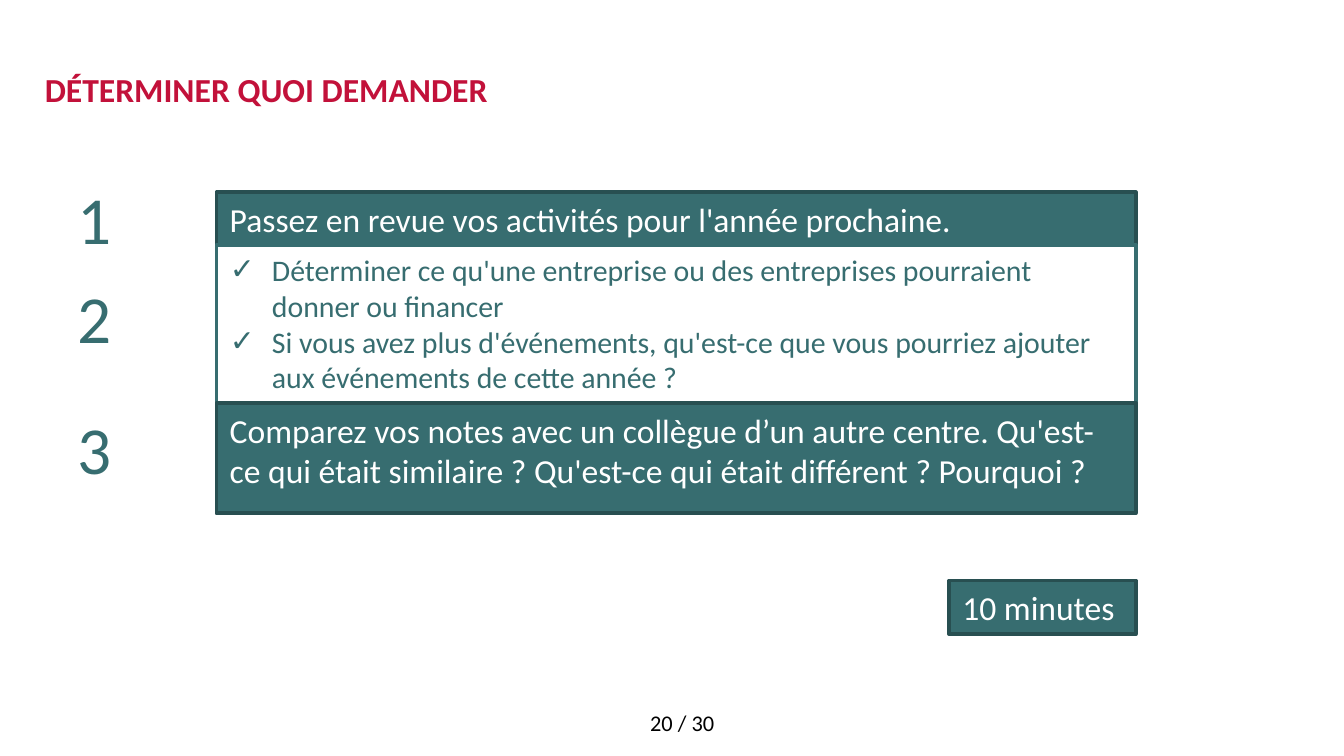
import pptx
import pptx.util
import pptx.oxml
from pptx.dml.color import RGBColor
from pptx.enum.shapes import MSO_SHAPE
from pptx.enum.text import MSO_ANCHOR, MSO_AUTO_SIZE, PP_ALIGN
from pptx.oxml.ns import nsdecls

Pt = pptx.util.Pt

RED = RGBColor(0xC2, 0x11, 0x3A)
TEAL = RGBColor(0x37, 0x6D, 0x70)
DARK_TEAL = RGBColor(0x28, 0x4F, 0x51)
WHITE = RGBColor(0xFF, 0xFF, 0xFF)
BLACK = RGBColor(0, 0, 0)

TITLE = "DÉTERMINER QUOI DEMANDER"
REVIEW = "Passez en revue vos activités pour l'année prochaine."
CHECKS = [
    "Déterminer ce qu'une entreprise ou des entreprises pourraient donner ou financer",
    "Si vous avez plus d'événements, qu'est-ce que vous pourriez ajouter aux événements de cette année ?",
]
COMPARE = ("Comparez vos notes avec un collègue d’un autre centre. Qu'est-ce qui était similaire ? "
           "Qu'est-ce qui était différent ? Pourquoi ?")
DURATION = "10 minutes"
PAGE = "20 / 30"
NUMBERS = [("1", 91.5), ("2", 144.7), ("3", 214.6)]  # text, top

LEFT, WIDTH = 116, 492.5
RIGHT = LEFT + WIDTH
REVIEW_TOP, CHECKS_TOP, COMPARE_TOP, COMPARE_BOTTOM = 103, 131.2, 216, 275
BAND_HEIGHT = 28.8
DURATION_WIDTH = 100
INDENT = 22.5


def place(sp, left, top, width, height):
    sp.left, sp.top, sp.width, sp.height = Pt(left), Pt(top), Pt(width), Pt(height)


def write(sp, text, size, color, bold=False, align=PP_ALIGN.LEFT, anchor=MSO_ANCHOR.TOP):
    tf = sp.text_frame
    tf.word_wrap = True
    tf.auto_size = MSO_AUTO_SIZE.NONE
    tf.vertical_anchor = anchor
    tf.text = text
    for p in tf.paragraphs:
        p.alignment = align
        p.space_before = Pt(0)
        for r in p.runs:
            r.font.name = "Calibri"
            r.font.size = Pt(size)
            r.font.bold = bold
            r.font.color.rgb = color


def paint(sp, fill, line):
    sp.fill.solid()
    sp.fill.fore_color.rgb = fill
    sp.line.color.rgb = line
    sp.line.width = Pt(2)


def add_band(s, text, left, top, width, height):
    sp = s.shapes.add_shape(MSO_SHAPE.RECTANGLE, Pt(left), Pt(top), Pt(width), Pt(height))
    sp.shadow.inherit = False
    paint(sp, TEAL, DARK_TEAL)
    write(sp, text, 18, WHITE)
    return sp


def add_label(s, text, left, top, width, height, size, color, align=PP_ALIGN.LEFT):
    sp = s.shapes.add_textbox(Pt(left), Pt(top), Pt(width), Pt(height))
    write(sp, text, size, color, align=align)


def add_check_mark(p):
    pPr = p._p.get_or_add_pPr()
    pPr.set("marL", str(Pt(INDENT)))
    pPr.set("indent", str(-Pt(INDENT)))
    for xml in (f'<a:buClr {nsdecls("a")}><a:srgbClr val="{TEAL}"/></a:buClr>',
                f'<a:buChar {nsdecls("a")} char="✓"/>'):
        pPr.append(pptx.oxml.parse_xml(xml))


prs = pptx.Presentation()
prs.slide_width, prs.slide_height = Pt(720), Pt(405)
s = prs.slides.add_slide(prs.slide_layouts[1])

title, checklist = s.placeholders[0], s.placeholders[1]
place(title, 24, 21, 672, 54.5)
write(title, TITLE, 18, RED, bold=True, align=PP_ALIGN.JUSTIFY, anchor=MSO_ANCHOR.MIDDLE)
tf = title.text_frame
tf.margin_left = tf.margin_right = tf.margin_top = tf.margin_bottom = 0
tf.paragraphs[0].line_spacing = Pt(20)

place(checklist, LEFT, CHECKS_TOP, WIDTH, COMPARE_TOP - CHECKS_TOP)
paint(checklist, WHITE, TEAL)
write(checklist, "\n".join(CHECKS), 16, TEAL)
for p in checklist.text_frame.paragraphs:
    add_check_mark(p)

review = add_band(s, REVIEW, LEFT, REVIEW_TOP, WIDTH, BAND_HEIGHT)
checklist.element.addprevious(review.element)  # the checklist overlaps the band's lower edge
add_band(s, COMPARE, LEFT, COMPARE_TOP, WIDTH, COMPARE_BOTTOM - COMPARE_TOP)
add_band(s, DURATION, RIGHT - DURATION_WIDTH, 311, DURATION_WIDTH, BAND_HEIGHT)

for number, top in NUMBERS:
    add_label(s, number, 34.6, top, 45, 51, 36, TEAL)
add_label(s, PAGE, 315.5, 376.5, 100, 22, 12, BLACK, PP_ALIGN.CENTER)

prs.save("out.pptx")
